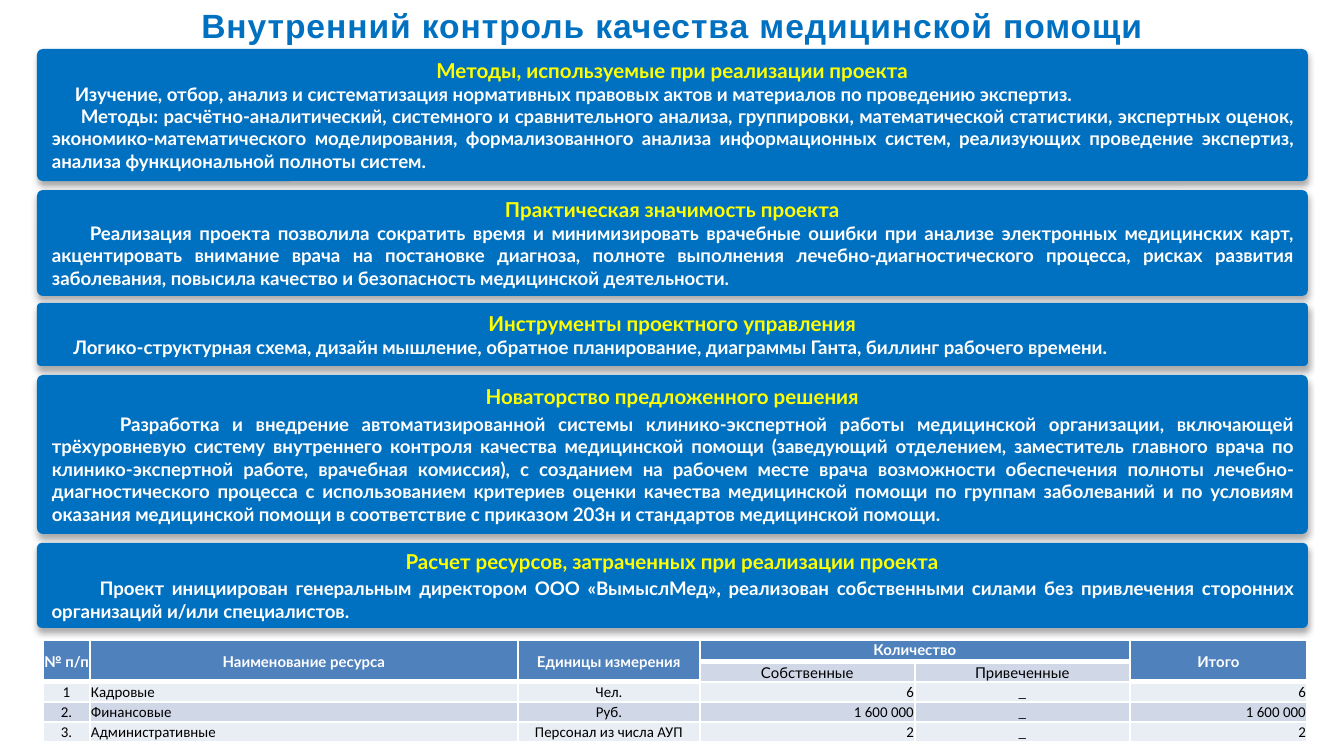
from dataclasses import dataclass

import lxml.etree
import pptx
import pptx.dml.color
import pptx.enum.shapes
import pptx.enum.text
import pptx.oxml.ns
import pptx.util

PX = 9144000 / 1344  # EMU in one px
ALIGN = pptx.enum.text.PP_ALIGN
MIDDLE = pptx.enum.text.MSO_ANCHOR.MIDDLE
TOP = pptx.enum.text.MSO_ANCHOR.TOP
BLUE, YELLOW, WHITE, BLACK = "0070C0", "FFFF00", "FFFFFF", "000000"
HEADER, DARK_BAND, LIGHT_BAND = "4F81BD", "D0D8E8", "E9EDF4"


@dataclass
class Body:
    text: str
    indent: int
    before: int = 0  # points


@dataclass
class Panel:
    top: int
    height: int
    corner: int
    heading: str
    bodies: list[Body]


PANELS = [
    Panel(49, 132, 6, "Методы, используемые при реализации проекта", [
        Body("Изучение, отбор, анализ и систематизация нормативных правовых актов и материалов "
             "по проведению экспертиз.", 23),
        Body("Методы: расчётно-аналитический, системного и сравнительного анализа, группировки, "
             "математической статистики, экспертных оценок, экономико-математического "
             "моделирования, формализованного анализа информационных систем, реализующих "
             "проведение экспертиз, анализа функциональной полноты систем.", 29)]),
    Panel(190, 106, 6, "Практическая значимость проекта", [
        Body("Реализация проекта позволила сократить время и минимизировать врачебные ошибки при "
             "анализе электронных медицинских карт, акцентировать внимание врача на постановке "
             "диагноза, полноте выполнения лечебно-диагностического процесса, рисках развития "
             "заболевания, повысила качество и безопасность медицинской деятельности.", 38)]),
    Panel(303, 63, 4, "Инструменты проектного управления", [
        Body("Логико-структурная схема, дизайн мышление, обратное планирование, диаграммы Ганта, "
             "биллинг рабочего времени.", 22)]),
    Panel(375, 159, 6, "Новаторство предложенного решения", [
        Body("Разработка и внедрение автоматизированной системы клинико-экспертной работы "
             "медицинской организации, включающей трёхуровневую систему внутреннего контроля "
             "качества медицинской помощи (заведующий отделением, заместитель главного врача по "
             "клинико-экспертной работе, врачебная комиссия), с созданием на рабочем месте врача "
             "возможности обеспечения полноты лечебно-диагностического процесса с использованием "
             "критериев оценки качества медицинской помощи по группам заболеваний и по условиям "
             "оказания медицинской помощи в соответствие с приказом 203н и стандартов "
             "медицинской помощи.", 68, 2)]),
    Panel(543, 85, 5, "Расчет ресурсов, затраченных при реализации проекта", [
        Body("Проект инициирован генеральным директором ООО «ВымыслМед», реализован собственными "
             "силами без привлечения сторонних организаций и/или специалистов.", 48, 2)]),
]

COLUMN_WIDTHS = [47, 428, 182, 215, 215, 177]
ROW_HEIGHTS = [22, 20, 20, 20, 20]
RESOURCES = [
    ["№ п/п", "Наименование ресурса", "Единицы измерения", "Количество", "", "Итого"],
    ["", "", "", "Собственные", "Привеченные", ""],
    ["1", "Кадровые", "Чел.", "6", "_", "6"],
    ["2.", "Финансовые", "Руб.", "1 600 000", "_", "1 600 000"],
    ["3.", "Административные", "Персонал из числа АУП", "2", "_", "2"],
]
RESOURCE_ALIGN = [ALIGN.CENTER, ALIGN.LEFT, ALIGN.CENTER, ALIGN.RIGHT, ALIGN.CENTER, ALIGN.RIGHT]


def px(length: int) -> pptx.util.Emu:
    return pptx.util.Emu(round(length * PX))


def color(value: str) -> pptx.dml.color.RGBColor:
    return pptx.dml.color.RGBColor.from_string(value)


def add_xml(parent, tag: str, **attributes):
    return lxml.etree.SubElement(parent, pptx.oxml.ns.qn(tag), attributes)


def add_run(paragraph, text: str, size: int, font: str, ink: str, bold: bool = True):
    run = paragraph.add_run()
    run.text = text
    run.font.size = pptx.util.Pt(size)
    run.font.name = font
    run.font.bold = bold
    run.font.color.rgb = color(ink)
    return run


def add_title(slide, text: str) -> None:
    title = slide.shapes.title
    title.left, title.top, title.width, title.height = px(7), px(3), px(1331), px(50)
    title.text_frame.vertical_anchor = MIDDLE
    title.text_frame.auto_size = pptx.enum.text.MSO_AUTO_SIZE.SHAPE_TO_FIT_TEXT
    paragraph = title.text_frame.paragraphs[0]
    paragraph.alignment = ALIGN.CENTER
    paragraph.line_spacing = 0.9
    run = add_run(paragraph, text, 18, "Arial", BLUE)
    run.font._element.set("spc", "50")


def add_shadow(shape) -> None:
    shape.shadow.inherit = False
    effects = shape._element.spPr.find(pptx.oxml.ns.qn("a:effectLst"))
    shadow = add_xml(effects, "a:outerShdw", blurRad="44450", dist="27940",
                     dir="5400000", rotWithShape="0")
    add_xml(add_xml(shadow, "a:srgbClr", val=BLACK), "a:alpha", val="32000")


def add_panel(slide, panel: Panel) -> None:
    box = slide.shapes.add_shape(pptx.enum.shapes.MSO_SHAPE.ROUNDED_RECTANGLE,
                                 px(37), px(panel.top), px(1271), px(panel.height))
    box.adjustments[0] = round(panel.corner / panel.height, 3)
    box.fill.solid()
    box.fill.fore_color.rgb = color(BLUE)
    box.line.fill.background()
    add_shadow(box)
    frame = box.text_frame
    frame.word_wrap = True
    frame.vertical_anchor = MIDDLE
    frame.auto_size = pptx.enum.text.MSO_AUTO_SIZE.SHAPE_TO_FIT_TEXT
    frame.paragraphs[0].alignment = ALIGN.CENTER
    add_run(frame.paragraphs[0], panel.heading, 11, "Lato", YELLOW)
    for body in panel.bodies:
        paragraph = frame.add_paragraph()
        paragraph.alignment = ALIGN.JUSTIFY
        paragraph.space_before = pptx.util.Pt(body.before)
        paragraph._p.get_or_add_pPr().set("indent", str(px(body.indent)))
        add_run(paragraph, body.text, 10, "Lato", WHITE)


def style_cell(cell, fill: str, bottom: int) -> None:
    cell.margin_left = cell.margin_right = px(1)
    cell.margin_top = cell.margin_bottom = 0
    cell.fill.solid()
    cell.fill.fore_color.rgb = color(fill)
    properties = cell._tc.get_or_add_tcPr()
    for index, (side, width) in enumerate([("L", 1), ("R", 1), ("T", 1), ("B", bottom)]):
        border = add_xml(properties, f"a:ln{side}", w=str(pptx.util.Pt(width)))
        add_xml(add_xml(border, "a:solidFill"), "a:srgbClr", val=WHITE)
        properties.insert(index, border)  # borders precede the fill


def add_resources(slide) -> None:
    table = slide.shapes.add_table(len(ROW_HEIGHTS), len(COLUMN_WIDTHS), px(43), px(640),
                                   px(sum(COLUMN_WIDTHS)), px(sum(ROW_HEIGHTS))).table
    table.first_row = table.horz_banding = False
    for column, width in zip(table.columns, COLUMN_WIDTHS):
        column.width = px(width)
    for row, height in zip(table.rows, ROW_HEIGHTS):
        row.height = px(height)
    # Header merges
    for column in (0, 1, 2, 5):
        table.cell(0, column).merge(table.cell(1, column))
    table.cell(0, 3).merge(table.cell(0, 4))
    # Cell contents
    for r, texts in enumerate(RESOURCES):
        for c, text in enumerate(texts):
            cell = table.cell(r, c)
            is_header = r == 0 or (r == 1 and c not in (3, 4))
            band = DARK_BAND if r % 2 else LIGHT_BAND
            style_cell(cell, HEADER if is_header else band, 3 if is_header else 1)
            is_top = (r, c) == (0, 3) or (r > 1 and c != 4)
            cell.vertical_anchor = TOP if is_top else MIDDLE
            paragraph = cell.text_frame.paragraphs[0]
            paragraph.alignment = RESOURCE_ALIGN[c] if r > 1 else ALIGN.CENTER
            paragraph.line_spacing = 1.07
            paragraph.space_after = pptx.util.Pt(8)
            if text:
                add_run(paragraph, text, 8, "Lato" if r < 2 else "Calibri",
                        WHITE if is_header else BLACK, is_header)


def main() -> None:
    deck = pptx.Presentation()
    deck.slide_width, deck.slide_height = px(1344), px(756)
    slide = deck.slides.add_slide(deck.slide_layouts[5])
    add_title(slide, "Внутренний контроль качества медицинской помощи")
    for panel in PANELS:
        add_panel(slide, panel)
    add_resources(slide)
    deck.save("out.pptx")


if __name__ == "__main__":
    main()
